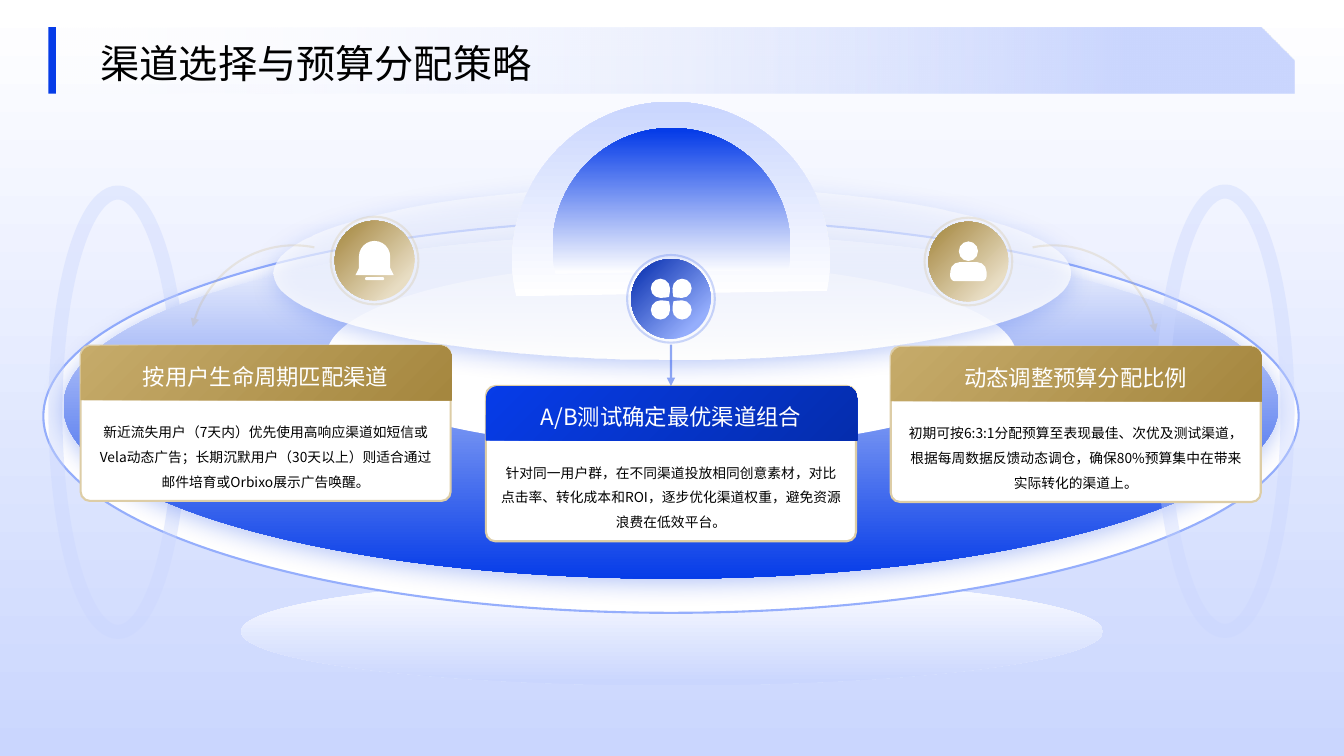
from dataclasses import dataclass
from math import cos, radians, sin

from lxml.etree import SubElement
from pptx import Presentation
from pptx.dml.color import RGBColor
from pptx.enum.shapes import MSO_CONNECTOR, MSO_SHAPE
from pptx.enum.text import MSO_ANCHOR, PP_ALIGN
from pptx.oxml.ns import qn
from pptx.util import Inches, Pt

# The page is a grid of square cells, 133.33 columns by 75 rows
CELL = Inches(0.1)
COLUMNS, ROWS = 133.33, 75
FONT = "Noto Sans CJK SC"
COLORS = {
    "white": "FFFFFF", "black": "000000", "blue": "063CE8", "navy": "052DAE",
    "sky": "95AEFC", "mist": "CAD6FE", "gold": "C6AB6A", "bronze": "A5873F",
    "cream": "E8DDC3", "sand": "DDCDA6",
}


@dataclass
class Box:
    left: float
    top: float
    width: float
    height: float

    def inner(self, left, top, width, height):
        return Box(self.left + left, self.top + top, width, height)

    def grow(self, margin):
        return self.inner(-margin, -margin, self.width + 2 * margin, self.height + 2 * margin)

    def lengths(self):
        return [round(size * CELL) for size in (self.left, self.top, self.width, self.height)]


def rgb(name):
    return RGBColor.from_string(COLORS[name])


def add_alpha(element, percent):
    SubElement(element, qn("a:alpha"), val=str(percent * 1000))


def paint(shape, fill=None, line=None, weight=1.5, line_alpha=100):
    """A fill is a colour name, or (angle, (position, colour, alpha), (position, colour, alpha))."""
    shape.shadow.inherit = False
    if fill is None:
        shape.fill.background()
    elif isinstance(fill, str):
        shape.fill.solid()
        shape.fill.fore_color.rgb = rgb(fill)
    else:
        angle, *stops = fill
        shape.fill.gradient()
        shape.fill.gradient_angle = (360 - angle) % 360
        for stop, (position, color, _) in zip(shape.fill.gradient_stops, stops):
            stop.position = position / 100
            stop.color.rgb = rgb(color)
        spans = shape._element.spPr.findall(".//" + qn("a:gs"))
        for span, (_, _, alpha) in zip(spans, stops):
            if alpha < 100:
                add_alpha(span[0], alpha)
    if line is None:
        shape.line.fill.background()
    else:
        stroke(shape, line, weight, line_alpha)
    return shape


def stroke(shape, color, weight, alpha, arrow=False):
    shape.line.color.rgb = rgb(color)
    shape.line.width = Pt(weight)
    outline = shape._element.spPr.find(qn("a:ln"))
    if alpha < 100:
        add_alpha(outline.find(".//" + qn("a:srgbClr")), alpha)
    if arrow:
        SubElement(outline, qn("a:tailEnd"), type="triangle")


def blend(angle, first, last, start=0, end=100, first_alpha=100):
    return angle, (start, first, first_alpha), (end, last, 100)


def add(page, kind, box, fill=None, adjust=(), **outline):
    shape = page.shapes.add_shape(kind, *box.lengths())
    for index, value in enumerate(adjust):
        shape.adjustments[index] = value
    return paint(shape, fill, **outline)


def glow(shape, alpha):
    effects = shape._element.spPr.find(qn("a:effectLst"))
    shadow = SubElement(effects, qn("a:outerShdw"), blurRad=str(Pt(18)), dist=str(Pt(3)),
                        dir="5400000", algn="t", rotWithShape="0")
    add_alpha(SubElement(shadow, qn("a:srgbClr"), val=COLORS["blue"]), alpha)


def write(page, box, text, size, color, spacing, align, anchor, inset=0):
    frame = page.shapes.add_textbox(*box.lengths()).text_frame
    frame.word_wrap = True
    frame.vertical_anchor = anchor
    frame.margin_left = frame.margin_right = Inches(inset)
    frame.margin_top = frame.margin_bottom = Inches(inset / 2)
    para = frame.paragraphs[0]
    para.add_run().text = text
    para.alignment, para.line_spacing = align, spacing
    para.font.size, para.font.name = Pt(size), FONT
    para.font.color.rgb = rgb(color)
    SubElement(para._p.pPr.find(qn("a:defRPr")), qn("a:ea"), typeface=FONT)


def draw_dome(page, center_x, center_y, radius, color):
    """A disc cut off by a slightly tilted chord below its centre."""
    points = [(round((center_x + radius * cos(radians(angle))) * CELL),
               round((center_y + radius * sin(radians(angle))) * CELL))
              for angle in range(167, 372, 2)]
    builder = page.shapes.build_freeform(*points[0], scale=1.0)
    builder.add_line_segments(points[1:], close=True)
    paint(builder.convert_to_shape(), blend(270, "white", color, end=98))


def draw_stage(page, box):
    """Stacked discs, upright side rings and the central dome."""
    oval = MSO_SHAPE.OVAL
    add(page, MSO_SHAPE.RECTANGLE, box, blend(90, "white", "mist"))
    add(page, oval, box.inner(23.9, 57.3, 85.5, 10.7), blend(90, "white", "mist", end=98))
    add(page, oval, box.inner(4.3, 21.8, 124.5, 39), "white", line="sky")
    ring = dict(line="mist", weight=10, line_alpha=40)
    add(page, oval, box.inner(5.5, 19.1, 12.4, 43.6), **ring)
    glow(add(page, oval, box.inner(6.3, 23.2, 120.5, 34.2), blend(90, "white", "blue")), 31)
    add(page, oval, box.inner(32.4, 26.1, 68.4, 18.4), "white")
    glow(add(page, oval, box.inner(27.1, 18.5, 79.1, 17.2),
             blend(90, "white", "white", first_alpha=43)), 28)
    add(page, oval, box.inner(115.3, 19, 12.4, 43.6), **ring)
    draw_dome(page, 66.55, 25.85, 15.75, "mist")
    draw_dome(page, 66.6, 24.5, 11.8, "blue")


def draw_badge(page, box, light, dark, ring, start, draw_icon):
    add(page, MSO_SHAPE.OVAL, box, blend(225, light, dark, start=start, end=98))
    add(page, MSO_SHAPE.OVAL, box.grow(0.4), line=ring, line_alpha=20)
    draw_icon(page, box)


def draw_bell(page, box):
    add(page, MSO_SHAPE.ROUND_2_SAME_RECTANGLE, box.inner(2.4, 2, 3.1, 3.1), "white", (0.5, 0))
    add(page, MSO_SHAPE.TRAPEZOID, box.inner(2.05, 4.6, 3.8, 0.8), "white", (0.5,))
    add(page, MSO_SHAPE.ROUNDED_RECTANGLE, box.inner(3, 5.6, 1.9, 0.3), "white", (0.5,))


def draw_clover(page, box):
    pitch = 2.15
    for row, rotations in enumerate(((90, 180), (0, 270))):
        for column, rotation in enumerate(rotations):
            petal = box.inner(1.95 + column * pitch, 1.95 + row * pitch, 1.9, 1.9)
            add(page, MSO_SHAPE.TEAR, petal, "white", (0.9,)).rotation = rotation


def draw_person(page, box):
    add(page, MSO_SHAPE.OVAL, box.inner(3, 1.95, 1.9, 1.95), "white")
    add(page, MSO_SHAPE.ROUND_2_SAME_RECTANGLE, box.inner(2.15, 4, 3.6, 1.9), "white", (0.5, 0.25))


def draw_swing(page, box, rotation, end, mirrored=False):
    """A curved arrow from a badge to its card."""
    arc = add(page, MSO_SHAPE.ARC, box, adjust=(173.48, end))
    arc.rotation = rotation
    if mirrored:
        arc._element.spPr.find(qn("a:xfrm")).set("flipH", "1")
    stroke(arc, "gold", 1.5, 20, arrow=True)


def draw_card(page, box, title, body, first, last):
    card = add(page, MSO_SHAPE.ROUNDED_RECTANGLE, box, "white", (0.06,), line="sand")
    add(page, MSO_SHAPE.ROUND_2_SAME_RECTANGLE, box.inner(0, 0, box.width + 0.1, 5.4),
        blend(45, first, last, end=99), (0.22, 0))
    write(page, box.inner(1.35, 6.95, 34, 6.9), body, 9.8, "black", 1.5,
          PP_ALIGN.CENTER, MSO_ANCHOR.TOP)
    write(page, box.inner(1.1, 0.45, 34.5, 4.6), title, 16, "white", 1.2,
          PP_ALIGN.CENTER, MSO_ANCHOR.MIDDLE)
    return card


def draw_drop(page, card, box):
    """The straight arrow down to the middle card."""
    left, top, _, height = box.lengths()
    drop = page.shapes.add_connector(MSO_CONNECTOR.STRAIGHT, left, top, left, top + height)
    drop.end_connect(card, 0)
    stroke(drop, "blue", 1.5, 43, arrow=True)
    SubElement(drop._element.spPr, qn("a:effectLst"))


def draw_header(page, box, title):
    add(page, MSO_SHAPE.SNIP_1_RECTANGLE, box,
        blend(0, "white", "mist", end=87, first_alpha=0), (0.5,))
    add(page, MSO_SHAPE.RECTANGLE, box.inner(0, 0, 0.75, box.height), "blue")
    write(page, box.inner(4.2, 0.8, 113.9, 5), title, 28, "black", 1.1,
          PP_ALIGN.LEFT, MSO_ANCHOR.MIDDLE, inset=0.1)


def main():
    deck = Presentation()
    deck.slide_width, deck.slide_height = Inches(13.33), Inches(7.5)
    page = deck.slides.add_slide(deck.slide_layouts[6])
    draw_stage(page, Box(0, 0, COLUMNS, ROWS))

    # Badges
    draw_badge(page, Box(92.1, 22, 7.9, 7.9), "cream", "bronze", "gold", 19, draw_person)
    draw_badge(page, Box(33.2, 21.9, 7.9, 7.9), "cream", "bronze", "gold", 19, draw_bell)
    draw_badge(page, Box(62.6, 25.7, 7.9, 7.9), "sky", "navy", "blue", 19, draw_clover)
    draw_swing(page, Box(94.4, 24.3, 20.3, 20.6), 328.9, 13.11)
    draw_swing(page, Box(18.9, 24.3, 20.3, 20.6), 31.1, 11.24, mirrored=True)

    # Cards
    draw_card(page, Box(8, 34.3, 36.7, 15.4), "按用户生命周期匹配渠道",
              "新近流失用户（7天内）优先使用高响应渠道如短信或Vela动态广告；"
              "长期沉默用户（30天以上）则适合通过邮件培育或Orbixo展示广告唤醒。",
              "gold", "bronze")
    draw_card(page, Box(88.35, 34.4, 36.7, 15.4), "动态调整预算分配比例",
              "初期可按6:3:1分配预算至表现最佳、次优及测试渠道，"
              "根据每周数据反馈动态调仓，确保80%预算集中在带来实际转化的渠道上。",
              "gold", "bronze")
    middle = draw_card(page, Box(48.2, 38.3, 36.7, 15.4), "A/B测试确定最优渠道组合",
                       "针对同一用户群，在不同渠道投放相同创意素材，"
                       "对比点击率、转化成本和ROI，逐步优化渠道权重，避免资源浪费在低效平台。",
                       "blue", "navy")
    draw_drop(page, middle, Box(66.55, 34.2, 0, 4))
    draw_header(page, Box(4.8, 2.7, 123.6, 6.6), "渠道选择与预算分配策略")
    deck.save("out.pptx")


if __name__ == "__main__":
    main()
